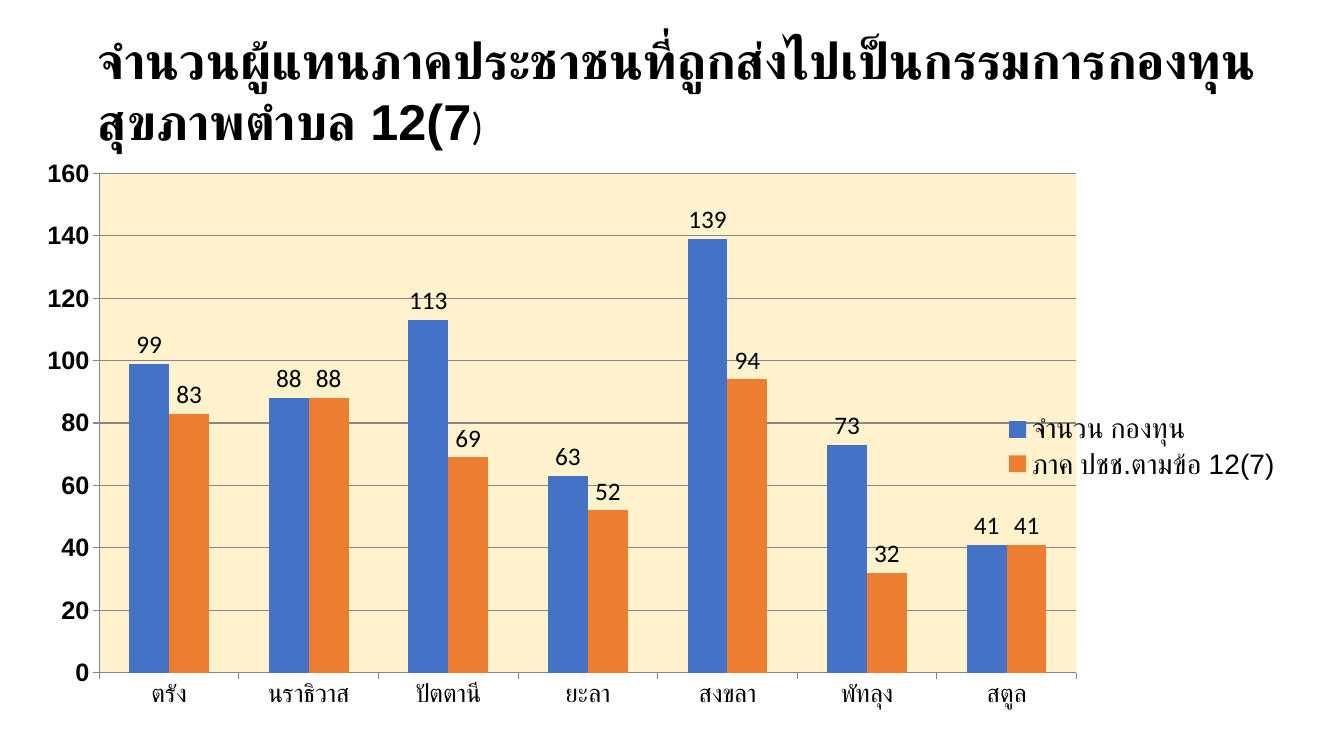
from dataclasses import dataclass

from lxml import etree
from pptx import Presentation
from pptx import util as u
from pptx.chart.chart import Chart
from pptx.chart.data import CategoryChartData
from pptx.dml.color import RGBColor
from pptx.enum import chart as charts, lang, text
from pptx.oxml import ns
from pptx.slide import Slide

BLACK = RGBColor(0x00, 0x00, 0x00)
BLUE = RGBColor(0x44, 0x72, 0xC4)
ORANGE = RGBColor(0xED, 0x7D, 0x31)
CREAM = RGBColor(0xFF, 0xF2, 0xCC)
GREY = RGBColor(0x86, 0x86, 0x86)

PROVINCES = ["ตรัง", "นราธิวาส", "ปัตตานี", "ยะลา", "สงขลา", "พัทลุง", "สตูล"]


@dataclass(frozen=True)
class Series:
    name: str
    values: tuple[int, ...]
    color: RGBColor


@dataclass(frozen=True)
class Span:
    words: str
    size: int
    font: str
    bold: bool


@dataclass(frozen=True)
class Layout:
    """Position and size as fractions of the chart."""
    x: float
    y: float
    w: float
    h: float


SERIES = [
    Series("จำนวน กองทุน", (99, 88, 113, 63, 139, 73, 41), BLUE),
    Series("ภาค ปชช.ตามข้อ 12(7)", (83, 88, 69, 52, 94, 32, 41), ORANGE),
]
TITLE = [
    Span("จำนวนผู้แทนภาคประชาชนที่ถูกส่งไปเป็นกรรมการกองทุนสุขภาพตำบล 12(7", 36, "Arial", True),
    Span(")", 28, "Calibri", False),
]
PLOT_LAYOUT = Layout(0.054, 0.025, 0.774, 0.836)
LEGEND_LAYOUT = Layout(0.77, 0.42, 0.22, 0.13)


def set_font(font, size: int, name: str, bold: bool = False) -> None:
    font.size = u.Pt(size)
    font.name = name
    font.bold = bold
    font.color.rgb = BLACK


def add_title(page: Slide) -> None:
    box = page.shapes.title
    box.left, box.top = u.Inches(0.87), u.Inches(0.24)
    box.width, box.height = u.Inches(12.1), u.Inches(1.31)
    frame = box.text_frame
    frame.word_wrap = True
    frame.auto_size = text.MSO_AUTO_SIZE.NONE
    frame.vertical_anchor = text.MSO_ANCHOR.TOP
    para = frame.paragraphs[0]
    para.alignment = text.PP_ALIGN.LEFT
    for part in TITLE:
        span = para.add_run()
        span.text = part.words
        set_font(span.font, part.size, part.font, part.bold)
        span.font.language_id = lang.MSO_LANGUAGE_ID.THAI


def set_layout(element, place: Layout, inner: bool = False) -> None:
    """Give a plot area or legend element a fixed place in its chart."""
    for old in element.findall(ns.qn("c:layout")):
        element.remove(old)
    layout = etree.Element(ns.qn("c:layout"))
    manual = etree.SubElement(layout, ns.qn("c:manualLayout"))
    settings = [("layoutTarget", "inner")] if inner else []
    settings += [("xMode", "edge"), ("yMode", "edge")]
    settings += [(side, str(getattr(place, side))) for side in "xywh"]
    for tag, value in settings:
        etree.SubElement(manual, ns.qn(f"c:{tag}")).set("val", value)
    if inner:
        element.insert(0, layout)
    else:
        element.find(ns.qn("c:legendPos")).addnext(layout)


def fill_plot_area(chart: Chart, color: RGBColor) -> None:
    area = chart.plots[0]._element.getparent()
    set_layout(area, PLOT_LAYOUT, inner=True)
    properties = etree.SubElement(area, ns.qn("c:spPr"))
    fill = etree.SubElement(properties, ns.qn("a:solidFill"))
    etree.SubElement(fill, ns.qn("a:srgbClr")).set("val", str(color))


def format_axes(chart: Chart) -> None:
    for axis, bold in ((chart.category_axis, False), (chart.value_axis, True)):
        set_font(axis.tick_labels.font, 18, "Arial", bold)
        axis.major_tick_mark = charts.XL_TICK_MARK.OUTSIDE
        axis.format.line.color.rgb = GREY
        axis.format.line.width = u.Pt(0.75)
    values = chart.value_axis
    values.minimum_scale, values.maximum_scale, values.major_unit = 0, 160, 20
    values.has_major_gridlines = True
    values.major_gridlines.format.line.color.rgb = GREY
    values.major_gridlines.format.line.width = u.Pt(0.75)


def format_bars(chart: Chart) -> None:
    plot = chart.plots[0]
    plot.vary_by_categories = False
    plot.gap_width, plot.overlap = 150, 0
    for bars, series in zip(plot.series, SERIES):
        bars.format.fill.solid()
        bars.format.fill.fore_color.rgb = series.color
        labels = bars.data_labels
        labels.show_value = True
        labels.position = charts.XL_LABEL_POSITION.OUTSIDE_END
        set_font(labels.font, 18, "Calibri")


def add_fund_chart(page: Slide) -> None:
    data = CategoryChartData()
    data.categories = PROVINCES
    for series in SERIES:
        data.add_series(series.name, series.values)
    chart = page.shapes.add_chart(
        charts.XL_CHART_TYPE.COLUMN_CLUSTERED,
        u.Inches(0.31), u.Inches(1.57), u.Inches(12.52), u.Inches(5.93), data,
    ).chart
    set_font(chart.font, 18, "Calibri")
    chart.has_title = False
    format_bars(chart)
    format_axes(chart)
    fill_plot_area(chart, CREAM)
    chart.has_legend = True
    chart.legend.position = charts.XL_LEGEND_POSITION.RIGHT
    chart.legend.include_in_layout = False
    set_font(chart.legend.font, 20, "Arial")
    set_layout(chart.legend._element, LEGEND_LAYOUT)


def main() -> None:
    deck = Presentation()
    deck.slide_width, deck.slide_height = u.Inches(13.33), u.Inches(7.5)
    page = deck.slides.add_slide(deck.slide_layouts.get_by_name("Title Only"))
    add_fund_chart(page)
    add_title(page)
    deck.save("out.pptx")


if __name__ == "__main__":
    main()
